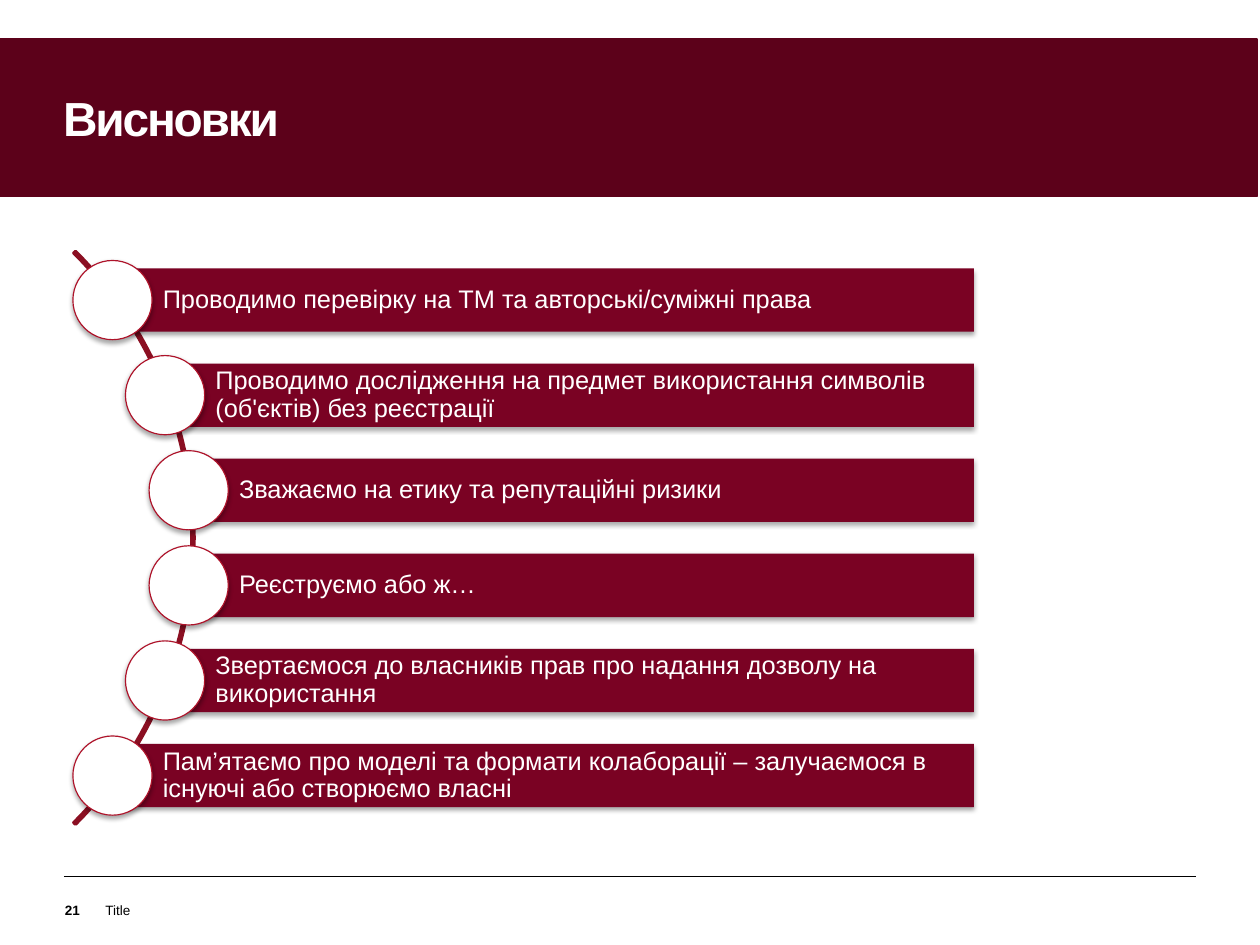
from math import sqrt

from lxml import etree
from pptx import Presentation
from pptx.dml.color import RGBColor
from pptx.enum.shapes import MSO_CONNECTOR as CONNECTOR, MSO_SHAPE as SHAPE
from pptx.enum.text import MSO_ANCHOR as ANCHOR, PP_ALIGN as ALIGN
from pptx.oxml import parse_xml
from pptx.oxml.ns import nsdecls, qn
from pptx.util import Pt

WHITE = RGBColor(0xFF, 0xFF, 0xFF)
BLACK = RGBColor(0x00, 0x00, 0x00)
BANNER_RED = RGBColor(0x5C, 0x01, 0x1A)
BAR_RED = RGBColor(0x7A, 0x02, 0x23)
ARC_RED = RGBColor(0x8B, 0x0F, 0x22)
RIM_RED = RGBColor(0xAE, 0x13, 0x2A)

SLIDE_WIDTH, SLIDE_HEIGHT = 793.75, 595.25

CONCLUSIONS = [
    "Проводимо перевірку на ТМ та авторські/суміжні права",
    "Проводимо дослідження на предмет використання символів (об'єктів) без реєстрації",
    "Зважаємо на етику та репутаційні ризики",
    "Реєструємо або ж…",
    "Звертаємося до власників прав про надання дозволу на використання",
    "Пам’ятаємо про моделі та формати колаборації – залучаємося в існуючі або створюємо власні",
]

# Arc and the rows strung along it, in points
ARC_X, ARC_Y, ARC_RADIUS = -132.9, 338.8, 255.2
DISC_PATH_X, DISC_PATH_RADIUS = -129.3, 250
ROW_PITCH = 59.9
BAR_RIGHT, BAR_HEIGHT, DISC_SIZE = 613.5, 39.9, 49.9

SHADOW = (
    f'<a:effectLst {nsdecls("a")}>'
    f'<a:outerShdw blurRad="{Pt(3.1)}" dist="{Pt(1.8)}" dir="5400000" rotWithShape="0">'
    '<a:srgbClr val="000000"><a:alpha val="35000"/></a:srgbClr>'
    '</a:outerShdw></a:effectLst>'
)


def write(shape, text, *, size, color, bold=False, align=ALIGN.LEFT, anchor=ANCHOR.TOP,
          insets=(0, 0, 0, 0), wrap=True, line_spacing=None, tracking=None):
    frame = shape.text_frame
    frame.word_wrap = wrap
    frame.vertical_anchor = anchor
    (frame.margin_left, frame.margin_top,
     frame.margin_right, frame.margin_bottom) = map(Pt, insets)
    paragraph = frame.paragraphs[0]
    paragraph.alignment = align
    paragraph.line_spacing = line_spacing
    run = paragraph.add_run()
    run.text = text
    run.font.name = "Arial"
    run.font.size = Pt(size)
    run.font.bold = bold
    run.font.color.rgb = color
    if tracking is not None:
        run.font._element.set("spc", str(round(tracking * 100)))


def add_label(slide, left, top, width, height, text, **style):
    label = slide.shapes.add_textbox(Pt(left), Pt(top), Pt(width), Pt(height))
    write(label, text, **style)


def add_figure(slide, preset, left, top, width, height, fill,
               line=None, line_width=1, shadow=False):
    figure = slide.shapes.add_shape(preset, Pt(left), Pt(top), Pt(width), Pt(height))
    figure.shadow.inherit = False
    figure.fill.solid()
    figure.fill.fore_color.rgb = fill
    if line is None:
        figure.line.fill.background()
    else:
        figure.line.color.rgb = line
        figure.line.width = Pt(line_width)
    if shadow:
        properties = figure._element.spPr
        properties.replace(properties.find(qn("a:effectLst")), parse_xml(SHADOW))
    return figure


def add_rule(slide, left, right, y):
    rule = slide.shapes.add_connector(CONNECTOR.STRAIGHT, Pt(left), Pt(y), Pt(right), Pt(y))
    rule.line.color.rgb = BLACK
    rule.line.width = Pt(0.75)
    etree.SubElement(rule._element.spPr, qn("a:effectLst"))


def add_arc(slide):
    arc = add_figure(slide, SHAPE.BLOCK_ARC, ARC_X - ARC_RADIUS, ARC_Y - ARC_RADIUS,
                     2 * ARC_RADIUS, 2 * ARC_RADIUS, ARC_RED, ARC_RED, 2)
    # From 315° to 45°, in units of 100000/60000 of a degree
    arc.adjustments[0] = 189
    arc.adjustments[1] = 27
    arc.adjustments[2] = 0.003


def add_conclusion(slide, index, text):
    offset = (index - (len(CONCLUSIONS) - 1) / 2) * ROW_PITCH
    x = DISC_PATH_X + sqrt(DISC_PATH_RADIUS ** 2 - offset ** 2)
    y = ARC_Y + offset
    bar = add_figure(slide, SHAPE.RECTANGLE, x, y - BAR_HEIGHT / 2,
                     BAR_RIGHT - x, BAR_HEIGHT, BAR_RED, shadow=True)
    write(bar, text, size=16, color=WHITE, anchor=ANCHOR.MIDDLE,
          insets=(31.7, 3, 3, 3), line_spacing=0.9)
    add_figure(slide, SHAPE.OVAL, x - DISC_SIZE / 2, y - DISC_SIZE / 2,
               DISC_SIZE, DISC_SIZE, WHITE, RIM_RED, 0.75, shadow=True)


def main():
    deck = Presentation()
    deck.slide_width, deck.slide_height = Pt(SLIDE_WIDTH), Pt(SLIDE_HEIGHT)
    slide = deck.slides.add_slide(deck.slide_layouts[6])

    # Footer
    add_label(slide, 39.6, 568, 10.8, 10, "21", size=8.5, color=BLACK, bold=True,
              align=ALIGN.RIGHT, wrap=False)
    add_label(slide, 66.4, 568, 240, 10, "Title", size=8.5, color=BLACK)
    add_rule(slide, 40.3, 753.2, 552.2)

    # Banner with the title
    add_figure(slide, SHAPE.RECTANGLE, -2, 24.5, SLIDE_WIDTH, 99.2, BANNER_RED, BANNER_RED)
    add_label(slide, 39.8, 59.8, 713, 50.4, "Висновки", size=30.1, color=WHITE,
              bold=True, line_spacing=0.9, tracking=-1.4)

    # Conclusions along the arc
    add_arc(slide)
    for index, text in enumerate(CONCLUSIONS):
        add_conclusion(slide, index, text)

    deck.save("out.pptx")


if __name__ == "__main__":
    main()
